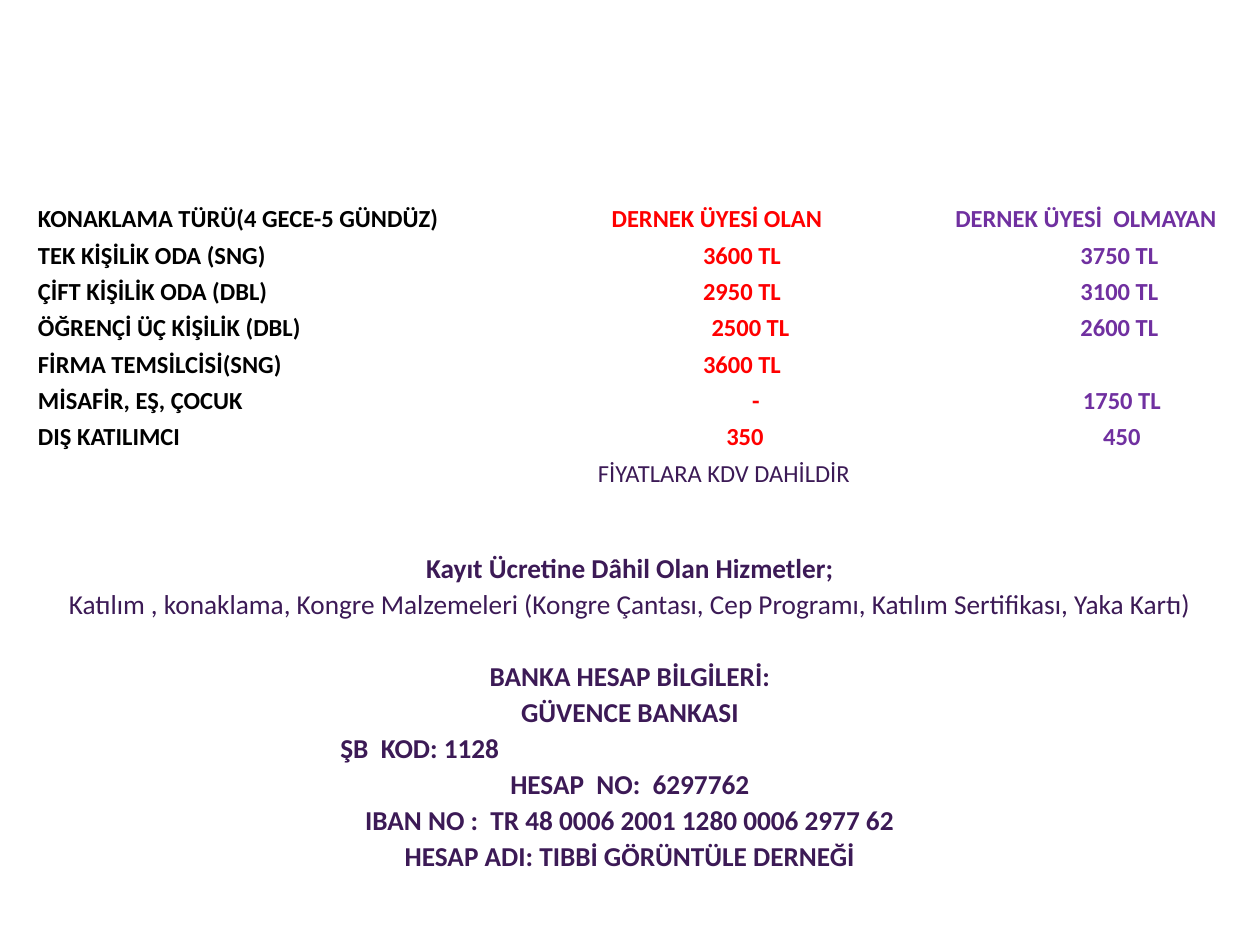
from lxml import etree
from pptx import Presentation
from pptx.dml.color import RGBColor
from pptx.enum.text import PP_ALIGN
from pptx.oxml.ns import qn
from pptx.util import Pt

LEFT, CENTER = PP_ALIGN.LEFT, PP_ALIGN.CENTER
BLACK, RED, PURPLE, PLUM = "000000", "FF0000", "7030A0", "3C1A56"
FONT = "Calibri"
CELL_PT = 14

PRICES = [
    [("KONAKLAMA TÜRÜ(4 GECE-5 GÜNDÜZ)", 0), ("DERNEK ÜYESİ OLAN", 0), ("DERNEK ÜYESİ  OLMAYAN", 0)],
    [("TEK KİŞİLİK ODA (SNG)", 0), ("3600 TL", 50), ("3750 TL", 67)],
    [("ÇİFT KİŞİLİK ODA (DBL)", 0), ("2950 TL", 50), ("3100 TL", 67)],
    [("ÖĞRENÇİ ÜÇ KİŞİLİK (DBL)", 0), ("2500 TL", 67), ("2600 TL", 67)],
    [("FİRMA TEMSİLCİSİ(SNG)", 0), ("3600 TL", 50), ("", 0)],
    [("MİSAFİR, EŞ, ÇOCUK", 0), ("-", 78), ("1750 TL", 72)],
    [("DIŞ KATILIMCI", 0), ("350", 56), ("450", 72)],
]
NOTE = ("FİYATLARA KDV DAHİLDİR", 161)
COLUMNS = [(491, BLACK, LEFT), (394, RED, CENTER), (344, PURPLE, CENTER)]

DETAILS = [
    ("Kayıt Ücretine Dâhil Olan Hizmetler;", {}),
    ("Katılım , konaklama, Kongre Malzemeleri (Kongre Çantası, Cep Programı, "
     "Katılım Sertifikası, Yaka Kartı)", {"bold": False}),
    ("BANKA HESAP BİLGİLERİ:", {"before": 36}),
    ("GÜVENCE BANKASI", {}),
    ("ŞB  KOD: 1128", {"indent": 328}),
    ("HESAP  NO:  6297762", {}),
    ("IBAN NO :  TR 48 0006 2001 1280 0006 2977 62", {}),
    ("HESAP ADI: TIBBİ GÖRÜNTÜLE DERNEĞİ", {}),
]


def px(n):
    return round(n * 914400 / 126)


def rgb(value):
    return RGBColor.from_string(value)


def write(p, text, size, color, align, spacing, bold=True):
    for name, value in {"alignment": align, "line_spacing": spacing}.items():
        setattr(p, name, value)
    r = p.add_run()
    r.text = text
    for name, value in {"name": FONT, "size": Pt(size), "bold": bold}.items():
        setattr(r.font, name, value)
    r.font.color.rgb = rgb(color)


def fill_cell(cell, text, shift, color, align, bold=True, inset=9):
    cell.fill.background()
    margins = {"margin_left": inset + shift, "margin_right": inset,
               "margin_top": 0, "margin_bottom": 0}
    for name, value in margins.items():
        setattr(cell, name, px(value))
    p = cell.text_frame.paragraphs[0]
    if text:
        write(p, text, CELL_PT, color, align, 1.15, bold)
    else:
        etree.SubElement(p._p, qn("a:endParaRPr"), sz=str(CELL_PT * 100))


def add_prices(s):
    width = sum(column[0] for column in COLUMNS)
    table = s.shapes.add_table(len(PRICES) + 1, len(COLUMNS),
                               px(29), px(200), px(width), px(291)).table
    table.first_row = table.horz_banding = False
    for c, (width, color, align) in enumerate(COLUMNS):
        table.columns[c].width = px(width)
        for r, row in enumerate(PRICES):
            fill_cell(table.cell(r, c), *row[c], color, align)
    last = len(PRICES)
    for c in range(1, len(COLUMNS)):
        fill_cell(table.cell(last, c), "", 0, PLUM, CENTER)
    table.cell(last, 0).merge(table.cell(last, len(COLUMNS) - 1))
    fill_cell(table.cell(last, 0), *NOTE, PLUM, CENTER, bold=False, inset=6)


def add_details(s):
    tf = s.shapes.add_textbox(0, px(542), px(1260), px(374)).text_frame
    tf.word_wrap = True
    for i, (text, style) in enumerate(DETAILS):
        p = tf.add_paragraph() if i else tf.paragraphs[0]
        indent = style.get("indent", 0)
        write(p, text, 15.6, PLUM, LEFT if indent else CENTER, 1.1, style.get("bold", True))
        p.space_before = px(style.get("before", 0))
        if indent:
            p._p.get_or_add_pPr().set("marL", str(px(indent)))


def main():
    prs = Presentation()
    prs.slide_width, prs.slide_height = px(1260), px(945)
    s = prs.slides.add_slide(prs.slide_layouts[6])
    add_prices(s)
    add_details(s)
    prs.save("out.pptx")


if __name__ == "__main__":
    main()
